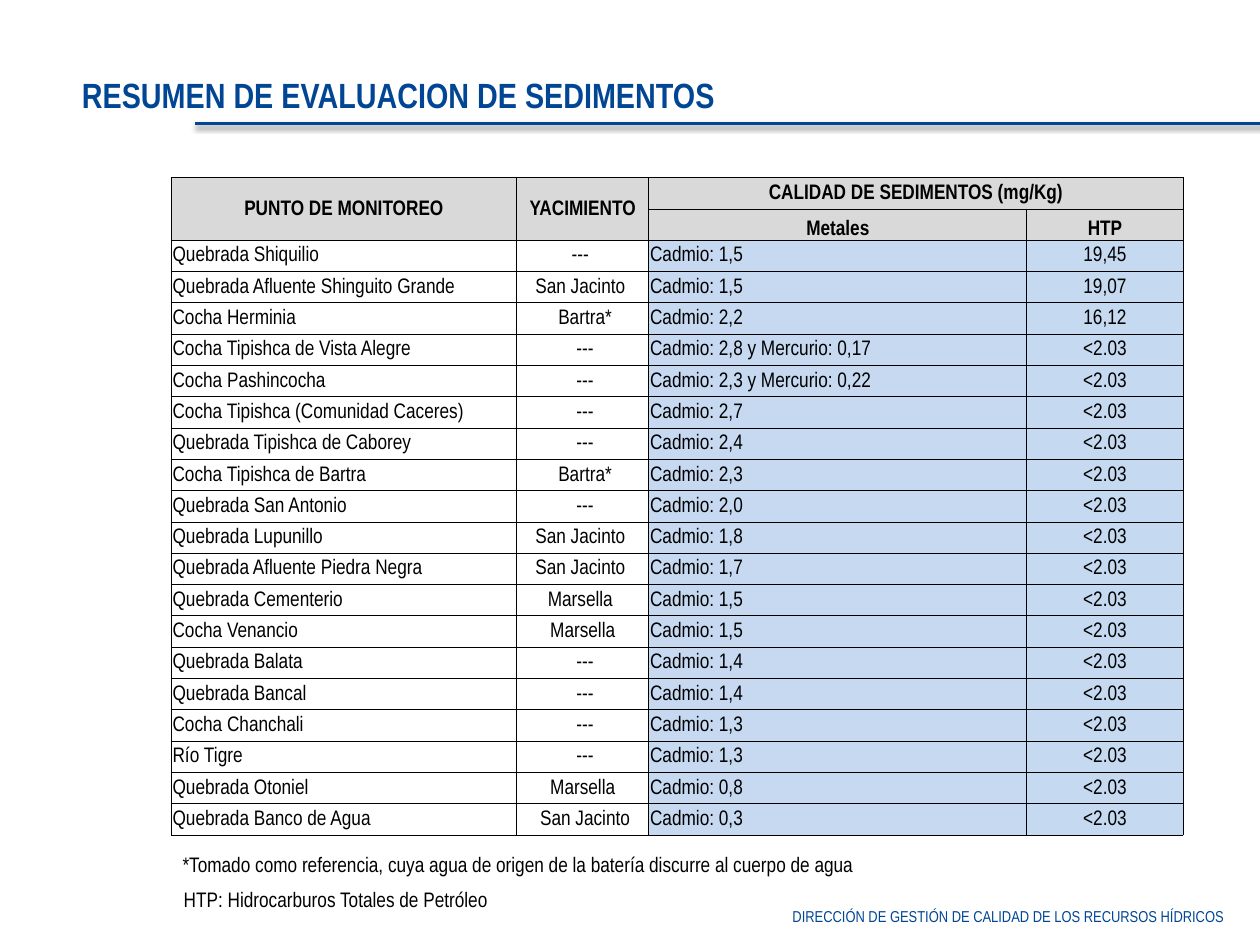
from dataclasses import dataclass

from lxml.etree import SubElement
from pptx import Presentation
from pptx.dml.color import RGBColor as RGB
from pptx.enum.shapes import MSO_CONNECTOR as Connector
from pptx.enum.text import MSO_ANCHOR as Anchor, MSO_AUTO_SIZE as AutoSize, PP_ALIGN as Align
from pptx.oxml.ns import qn
from pptx.util import Inches, Pt


@dataclass(frozen=True)
class Theme:
    font: str = "Arial Narrow"
    blue: str = "004694"
    black: str = "000000"
    header_fill: str = "D9D9D9"
    metals_fill: str = "C6D9F1"
    htp_fill: str = "C5D9F1"
    title_size: int = 20
    text_size: int = 12
    footer_size: int = 9


THEME = Theme()
COL_WIDTHS = (2.74, 1.05, 3.0, 1.24)
TABLE_HEIGHT = 5.22
BELOW_LIMIT = "<2.03"

# Sampling point, oil field, metals, HTP
SAMPLES = [
    ("Quebrada Shiquilio", "--- ", "Cadmio: 1,5", "19,45"),
    ("Quebrada Afluente Shinguito Grande", "San Jacinto ", "Cadmio: 1,5", "19,07"),
    ("Cocha Herminia", " Bartra*", "Cadmio: 2,2", "16,12"),
    ("Cocha Tipishca de Vista Alegre", " ---", "Cadmio: 2,8 y Mercurio: 0,17", BELOW_LIMIT),
    ("Cocha Pashincocha", " ---", "Cadmio: 2,3 y Mercurio: 0,22", BELOW_LIMIT),
    ("Cocha Tipishca (Comunidad Caceres)", " ---", "Cadmio: 2,7", BELOW_LIMIT),
    ("Quebrada Tipishca de Caborey", " ---", "Cadmio: 2,4", BELOW_LIMIT),
    ("Cocha Tipishca de Bartra", " Bartra*", "Cadmio: 2,3", BELOW_LIMIT),
    ("Quebrada San Antonio", " ---", "Cadmio: 2,0", BELOW_LIMIT),
    ("Quebrada Lupunillo", "San Jacinto ", "Cadmio: 1,8", BELOW_LIMIT),
    ("Quebrada Afluente Piedra Negra", "San Jacinto ", "Cadmio: 1,7", BELOW_LIMIT),
    ("Quebrada Cementerio", "Marsella ", "Cadmio: 1,5", BELOW_LIMIT),
    ("Cocha Venancio", "Marsella", "Cadmio: 1,5", BELOW_LIMIT),
    ("Quebrada Balata", " ---", "Cadmio: 1,4", BELOW_LIMIT),
    ("Quebrada Bancal", " ---", "Cadmio: 1,4", BELOW_LIMIT),
    ("Cocha Chanchali", " ---", "Cadmio: 1,3", BELOW_LIMIT),
    ("Río Tigre", " ---", "Cadmio: 1,3", BELOW_LIMIT),
    ("Quebrada Otoniel", "Marsella", "Cadmio: 0,8", BELOW_LIMIT),
    ("Quebrada Banco de Agua", " San Jacinto", "Cadmio: 0,3", BELOW_LIMIT),
]


def set_text(tf, text, size, color, bold=False, align=Align.LEFT):
    tf.text = text
    p = tf.paragraphs[0]
    p.alignment = align
    font = p.runs[0].font
    font.name, font.size, font.bold = THEME.font, Pt(size), bold
    font.color.rgb = RGB.from_string(color)


def add_title(s, text):
    title = s.shapes.title
    title.left, title.top = Inches(0.55), Inches(0.53)
    title.width, title.height = Inches(8.63), Inches(0.44)
    tf = title.text_frame
    set_text(tf, text, THEME.title_size, THEME.blue, bold=True)
    tf.auto_size = AutoSize.NONE
    tf.vertical_anchor = Anchor.MIDDLE


def add_text(s, text, left, top, width, height, size, color, align=Align.LEFT, wrap=True):
    box = s.shapes.add_textbox(Inches(left), Inches(top), Inches(width), Inches(height))
    tf = box.text_frame
    tf.word_wrap = wrap
    set_text(tf, text, size, color, align=align)


def add_title_rule(s):
    y = Inches(0.98)
    rule = s.shapes.add_connector(Connector.STRAIGHT, Inches(1.55), y, Inches(10.12), y)
    rule.line.color.rgb = RGB.from_string(THEME.blue)
    rule.line.width = Pt(2)
    # Soft shadow straight below the rule
    effects = SubElement(rule._element.spPr, qn("a:effectLst"))
    shadow = SubElement(effects, qn("a:outerShdw"), blurRad=str(Pt(3.1)), dist=str(Pt(1.6)),
                        dir="5400000", rotWithShape="0")
    color = SubElement(shadow, qn("a:srgbClr"), val=THEME.black)
    SubElement(color, qn("a:alpha"), val="38000")


def set_borders(cell):
    tc_pr = cell._tc.get_or_add_tcPr()
    for i, side in enumerate(("lnL", "lnR", "lnT", "lnB")):
        ln = tc_pr.makeelement(qn(f"a:{side}"), {"w": str(Pt(0.5))})
        fill = SubElement(ln, qn("a:solidFill"))
        SubElement(fill, qn("a:srgbClr"), val=THEME.black)
        tc_pr.insert(i, ln)  # borders come before the fill


def format_cell(cell, fill=None, anchor=Anchor.MIDDLE):
    cell.margin_left = cell.margin_right = cell.margin_top = Inches(0.01)
    cell.margin_bottom = 0
    cell.vertical_anchor = anchor
    if fill:
        cell.fill.solid()
        cell.fill.fore_color.rgb = RGB.from_string(fill)
    else:
        cell.fill.background()
    set_borders(cell)


def add_header(table):
    for row in range(2):
        for col in range(len(COL_WIDTHS)):
            anchor = Anchor.BOTTOM if row and col > 1 else Anchor.MIDDLE
            format_cell(table.cell(row, col), THEME.header_fill, anchor)
    for start, end in (((0, 0), (1, 0)), ((0, 1), (1, 1)), ((0, 2), (0, 3))):
        table.cell(*start).merge(table.cell(*end))
    labels = {
        (0, 0): "PUNTO DE MONITOREO",
        (0, 1): "YACIMIENTO",
        (0, 2): "CALIDAD DE SEDIMENTOS (mg/Kg)",
        (1, 2): "Metales",
        (1, 3): "HTP",
    }
    for place, label in labels.items():
        set_text(table.cell(*place).text_frame, label, THEME.text_size, THEME.black,
                 bold=True, align=Align.CENTER)


def add_sediment_table(s):
    n_rows = len(SAMPLES) + 2
    table = s.shapes.add_table(n_rows, len(COL_WIDTHS), Inches(1.36), Inches(1.41),
                               Inches(sum(COL_WIDTHS)), Inches(TABLE_HEIGHT)).table
    table.first_row = table.horz_banding = False
    for column, width in zip(table.columns, COL_WIDTHS):
        column.width = Inches(width)
    for row in table.rows:
        row.height = Inches(TABLE_HEIGHT / n_rows)
    add_header(table)
    # Body: names and metals to the left, the rest centred
    fills = (None, None, THEME.metals_fill, THEME.htp_fill)
    aligns = (Align.LEFT, Align.CENTER, Align.LEFT, Align.CENTER)
    for row, sample in enumerate(SAMPLES, start=2):
        for col, (text, fill, align) in enumerate(zip(sample, fills, aligns)):
            cell = table.cell(row, col)
            format_cell(cell, fill)
            set_text(cell.text_frame, text, THEME.text_size, THEME.black, align=align)


def main():
    prs = Presentation()
    prs.slide_width, prs.slide_height = Inches(10), Inches(7.5)
    s = prs.slides.add_slide(prs.slide_layouts[5])

    # Footer and heading
    add_text(s, "DIRECCIÓN DE GESTIÓN DE CALIDAD DE LOS RECURSOS HÍDRICOS",
             5.17, 7.15, 4.64, 0.25, THEME.footer_size, THEME.blue, align=Align.RIGHT)
    add_title(s, "RESUMEN DE EVALUACION DE SEDIMENTOS")
    add_title_rule(s)

    # Results and their notes
    add_sediment_table(s)
    add_text(s, "HTP: Hidrocarburos Totales de Petróleo",
             1.36, 6.99, 4.76, 0.3, THEME.text_size, THEME.black)
    add_text(s, "*Tomado como referencia, cuya agua de origen de la batería discurre al cuerpo de agua",
             1.35, 6.71, 5.59, 0.3, THEME.text_size, THEME.black, wrap=False)

    prs.save("out.pptx")


if __name__ == "__main__":
    main()
